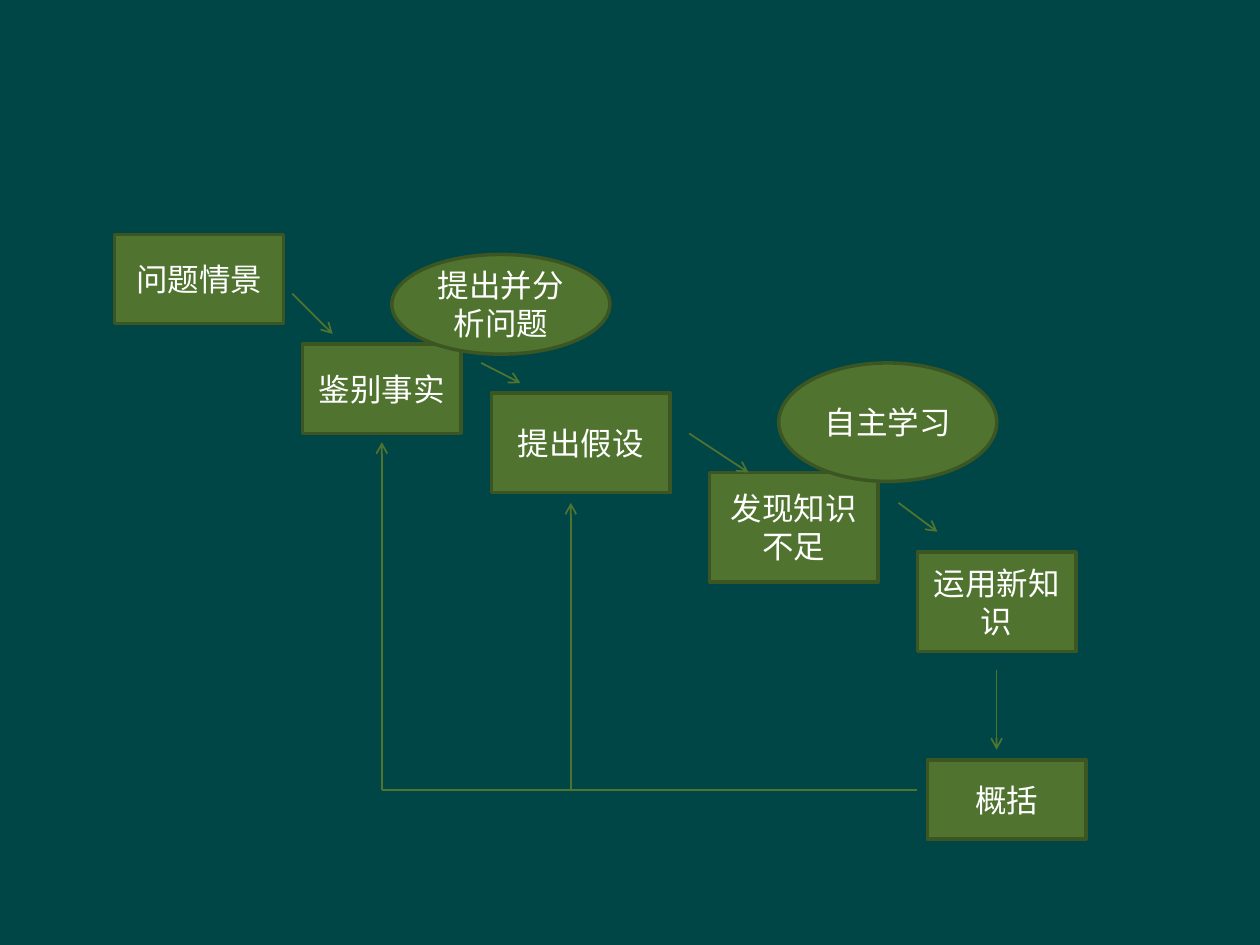
from dataclasses import dataclass

from lxml import etree
from pptx import Presentation
from pptx import util as u
from pptx.dml.color import RGBColor
from pptx.enum import shapes, text
from pptx.oxml import ns

Pt = u.Pt


@dataclass(frozen=True)
class Theme:
    background: RGBColor = RGBColor(0x00, 0x46, 0x46)
    fill: RGBColor = RGBColor(0x50, 0x74, 0x2F)
    outline: RGBColor = RGBColor(0x3B, 0x56, 0x23)
    label: RGBColor = RGBColor(0xFF, 0xFF, 0xFF)
    font: str = "Times New Roman"
    size: int = 18
    outline_width: int = 2
    line_width: int = 1


THEME = Theme()

# Each entry: label, left, top, width, height, relative to the diagram box
STEPS = [
    ("问题情景", 0, 0, 96.5, 51),
    ("鉴别事实", 107.3, 62.7, 90.7, 51),
    ("提出假设", 215.3, 90.7, 102.2, 57),
    ("发现知识不足", 339.9, 136.1, 96.5, 62.6),
    ("运用新知识", 458.7, 181.5, 90.7, 57),
    ("概括", 464.4, 300.3, 90.7, 45.4),
]
ACTIVITIES = [
    ("提出并分析问题", 158.4, 11.5, 124.6, 57),
    ("自主学习", 379.5, 73.5, 124.6, 67.7),
]
# Each entry: start x, start y, end x, end y
STEP_ARROWS = [
    (101.5, 33.9, 124.6, 56.9),
    (209.5, 73.5, 231.9, 85),
    (328.3, 113.8, 362.2, 136.1),
    (447.9, 153.4, 470.2, 170),
    (504, 249.1, 504, 294.5),
]
# Feedback line: its height, its right end, and the (x, tip y) of each riser
FEEDBACK_Y, FEEDBACK_RIGHT = 317.5, 458.7
FEEDBACK_RISERS = [(260.7, 153.4), (152.7, 118.8)]


def add_node(page, kind, label, left, top, width, height):
    node = page.shapes.add_shape(kind, Pt(left), Pt(top), Pt(width), Pt(height))
    node.shadow.inherit = False
    node.fill.solid()
    node.fill.fore_color.rgb = THEME.fill
    node.line.color.rgb = THEME.outline
    node.line.width = Pt(THEME.outline_width)
    frame = node.text_frame
    frame.word_wrap = True
    frame.vertical_anchor = text.MSO_ANCHOR.MIDDLE
    para = frame.paragraphs[0]
    para.text = label
    para.alignment = text.PP_ALIGN.CENTER
    para.font.name = THEME.font
    para.font.size = Pt(THEME.size)
    para.font.color.rgb = THEME.label


def add_line(page, x1, y1, x2, y2, arrow=True):
    line = page.shapes.add_connector(
        shapes.MSO_CONNECTOR.STRAIGHT, Pt(x1), Pt(y1), Pt(x2), Pt(y2))
    line.line.color.rgb = THEME.fill
    line.line.width = Pt(THEME.line_width)
    if arrow:
        outline = line.line._get_or_add_ln()
        etree.SubElement(outline, ns.qn("a:tailEnd"), type="arrow")
    etree.SubElement(line._element.spPr, ns.qn("a:effectLst"))


def add_nodes(page, left, top, kind, nodes):
    for label, x, y, width, height in nodes:
        add_node(page, kind, label, left + x, top + y, width, height)


def add_step_arrows(page, left, top):
    for x1, y1, x2, y2 in STEP_ARROWS:
        add_line(page, left + x1, top + y1, left + x2, top + y2)


def add_feedback(page, left, top):
    base = top + FEEDBACK_Y
    for x, tip in FEEDBACK_RISERS:
        add_line(page, left + x, base, left + x, top + tip)
    start = min(x for x, _ in FEEDBACK_RISERS)
    add_line(page, left + start, base, left + FEEDBACK_RIGHT, base, arrow=False)


def add_process(page, left, top):
    # Steps of the process, descending to the right
    add_nodes(page, left, top, shapes.MSO_SHAPE.RECTANGLE, STEPS)
    # Arrows between the steps, and back to the earlier ones
    add_step_arrows(page, left, top)
    add_feedback(page, left, top)
    # Activities overlapping the steps
    add_nodes(page, left, top, shapes.MSO_SHAPE.OVAL, ACTIVITIES)


def main():
    deck = Presentation()
    deck.slide_width, deck.slide_height = Pt(720), Pt(540)
    page = deck.slides.add_slide(deck.slide_layouts[6])
    page.background.fill.solid()
    page.background.fill.fore_color.rgb = THEME.background
    add_process(page, left=65.5, top=133.9)
    deck.save("out.pptx")


if __name__ == "__main__":
    main()
